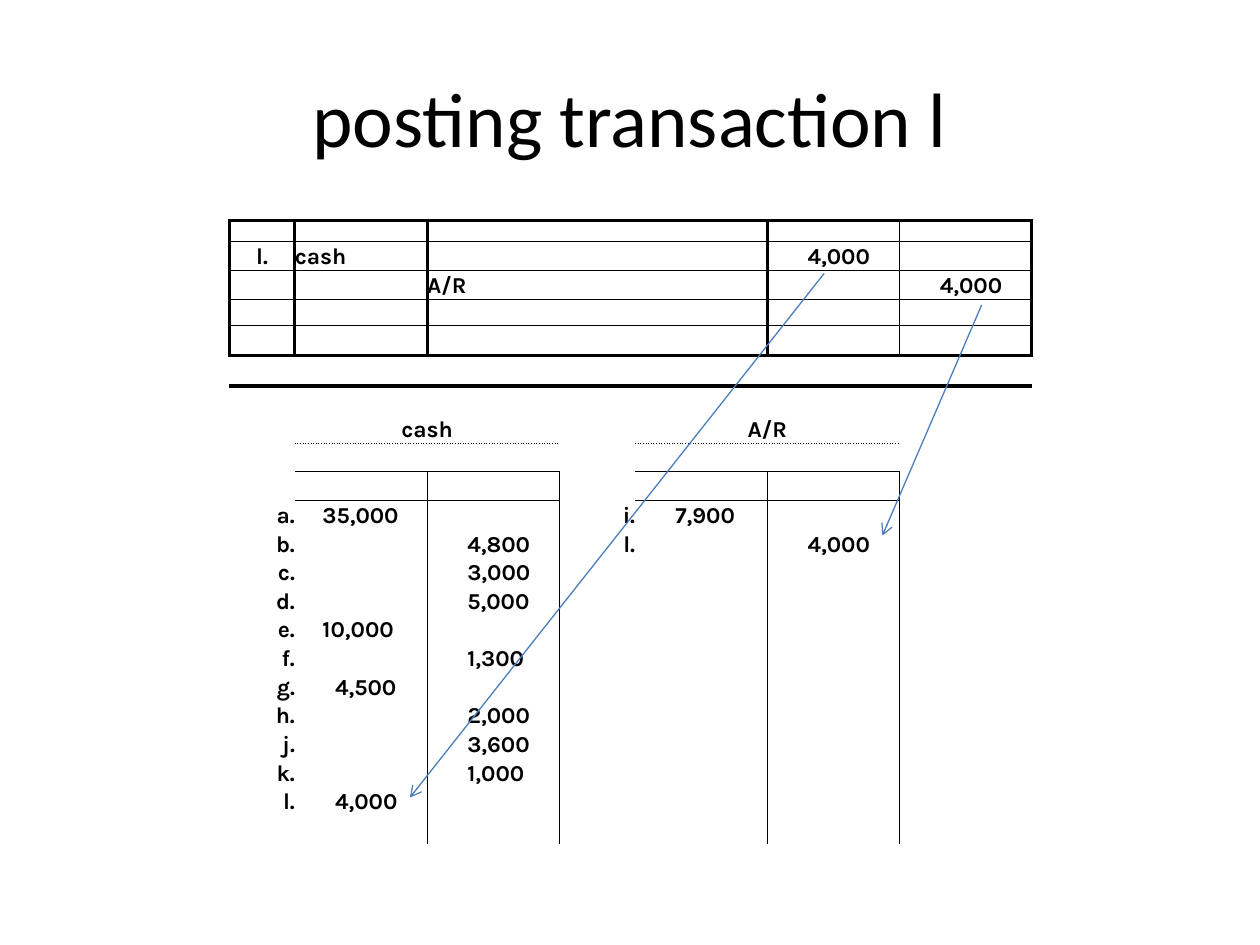
"""Build a slide that posts journal entry l to the cash and A/R accounts."""
from collections import defaultdict
from dataclasses import dataclass

from lxml.etree import SubElement
from pptx import Presentation
from pptx.dml.color import RGBColor
from pptx.enum.shapes import MSO_CONNECTOR as Connector
from pptx.enum.text import MSO_ANCHOR as Anchor, PP_ALIGN as Align
from pptx.oxml.ns import qn
from pptx.util import Inches, Pt


@dataclass(frozen=True)
class Theme:
    ink: str = "000000"
    arrow: str = "4B7EBC"
    title_font: str = "Calibri"
    table_font: str = "Karla"
    title_size: int = 44
    table_size: int = 13
    empty_size: int = 8
    thick: float = 2
    thin: float = 0.5
    arrow_width: float = 0.75
    plain_table: str = "{2D5ABB26-0587-4C30-8999-92F81FD0307C}"


THEME = Theme()
TITLE = "posting transaction l"
JOURNAL = [(1, 0, "l."), (1, 1, "cash"), (1, 5, "4,000"), (2, 2, "A/R"), (2, 6, "4,000")]
ACCOUNTS = [
    ("cash", 1, [
        ("a.", "35,000", ""), ("b.", "", "4,800"), ("c.", "", "3,000"),
        ("d.", "", "5,000"), ("e.", "10,000", ""), ("f.", "", "1,300"),
        ("g.", "4,500", ""), ("h.", "", "2,000"), ("j.", "", "3,600"),
        ("k.", "", "1,000"), ("l.", "4,000", ""),
    ]),
    ("A/R", 4, [("i.", "7,900", ""), ("l.", "", "4,000")]),
]
POSTINGS = [((5.43, 2.1), (1.87, 20.37)), ((6.62, 3.22), (5.87, 11.22))]

WIDTH, HEIGHT = 10, 7.5
LEFT, TOP, TABLE_HEIGHT = 1.82, 1.75, 4.95
COLUMNS = [0.52, 1.05, 1.05, 0.6, 1.05, 1.05, 1.05]
ROW_COUNT = 22
SPECIAL_ROWS = {0: 0.17, 3: 0.21, 4: 0.24, 5: 0.24}
COMMON_ROW = (TABLE_HEIGHT - sum(SPECIAL_ROWS.values())) / (ROW_COUNT - len(SPECIAL_ROWS))
ROWS = [SPECIAL_ROWS.get(row, COMMON_ROW) for row in range(ROW_COUNT)]
JOURNAL_ROWS, HEADING_ROW, FIRST_ENTRY = 5, 7, 10
INDENTS = {5: 0.32, 6: 0.22}


def write(frame, text, font, size, align=Align.LEFT, bold=False):
    paragraph = frame.paragraphs[0]
    paragraph.alignment = align
    run = paragraph.add_run()
    run.text = text
    run.font.name, run.font.size, run.font.bold = font, Pt(size), bold
    run.font.color.rgb = RGBColor.from_string(THEME.ink)


def write_cell(cell, text, align=Align.LEFT):
    cell.vertical_anchor = Anchor.BOTTOM
    is_amount = "," in text
    cell.margin_left = Inches(INDENTS[len(text)] if is_amount else 0)
    cell.margin_right = cell.margin_top = cell.margin_bottom = 0
    write(cell.text_frame, text, THEME.table_font, THEME.table_size, align, bold=True)


def collect_borders():
    borders = defaultdict(dict)

    def horizontal(edge, columns, width, dash="solid"):
        for column in columns:
            borders[edge - 1, column]["B"] = borders[edge, column]["T"] = (width, dash)

    def vertical(edge, rows, width):
        for row in rows:
            borders[row, edge - 1]["R"] = borders[row, edge]["L"] = (width, "solid")

    for edge in range(JOURNAL_ROWS + 1):
        width = THEME.thick if edge in (0, JOURNAL_ROWS) else THEME.thin
        horizontal(edge, range(len(COLUMNS)), width)
    for edge in (0, 1, 5, 6, 7):
        vertical(edge, range(JOURNAL_ROWS), THEME.thin if edge == 6 else THEME.thick)
    for _, first, _ in ACCOUNTS:
        horizontal(HEADING_ROW + 1, (first, first + 1), THEME.thin, "sysDot")
        horizontal(HEADING_ROW + 2, (first, first + 1), THEME.thin)
        vertical(first + 1, range(HEADING_ROW + 2, ROW_COUNT), THEME.thin)
    return borders


def style_cell(cell, sides):
    properties = cell._tc.get_or_add_tcPr()
    for side in "LRTB":
        if side in sides:
            width, dash = sides[side]
            line = SubElement(properties, qn(f"a:ln{side}"), w=str(Pt(width)))
            fill = SubElement(line, qn("a:solidFill"))
            SubElement(fill, qn("a:srgbClr"), val=THEME.ink)
            SubElement(line, qn("a:prstDash"), val=dash)
    cell.fill.background()
    if not cell.text:
        cell.margin_top = cell.margin_bottom = 0
        paragraph = cell.text_frame.paragraphs[0]
        SubElement(paragraph._p, qn("a:endParaRPr"), sz=str(THEME.empty_size * 100))


def add_ledger(slide):
    table = slide.shapes.add_table(
        ROW_COUNT, len(COLUMNS), Inches(LEFT), Inches(TOP),
        Inches(sum(COLUMNS)), Inches(TABLE_HEIGHT),
    ).table
    table.first_row = table.horz_banding = False
    table._tbl.tblPr.find(qn("a:tableStyleId")).text = THEME.plain_table
    for column, width in zip(table.columns, COLUMNS):
        column.width = Inches(width)
    for row, height in zip(table.rows, ROWS):
        row.height = Inches(height)

    for row, column, text in JOURNAL:
        align = Align.CENTER if column == 0 else Align.LEFT
        write_cell(table.cell(row, column), text, align)
    for name, first, entries in ACCOUNTS:
        heading = table.cell(HEADING_ROW, first)
        heading.merge(table.cell(HEADING_ROW, first + 1))
        write_cell(heading, name, Align.CENTER)
        for row, (label, *amounts) in enumerate(entries, FIRST_ENTRY):
            write_cell(table.cell(row, first - 1), label, Align.RIGHT)
            for column, amount in enumerate(amounts, first):
                if amount:
                    write_cell(table.cell(row, column), amount)

    borders = collect_borders()
    for row in range(ROW_COUNT):
        for column in range(len(COLUMNS)):
            style_cell(table.cell(row, column), borders.get((row, column), {}))


def grid_offset(sizes, position):
    index = int(position)
    return sum(sizes[:index]) + (position - index) * sizes[index]


def grid_point(column, row):
    return Inches(LEFT + grid_offset(COLUMNS, column)), Inches(TOP + grid_offset(ROWS, row))


def add_arrow(slide, start, end):
    arrow = slide.shapes.add_connector(Connector.STRAIGHT, *grid_point(*start), *grid_point(*end))
    arrow.line.color.rgb = RGBColor.from_string(THEME.arrow)
    arrow.line.width = Pt(THEME.arrow_width)
    SubElement(arrow.line._get_or_add_ln(), qn("a:tailEnd"), type="arrow")
    SubElement(arrow._element.spPr, qn("a:effectLst"))


def main():
    presentation = Presentation()
    presentation.slide_width, presentation.slide_height = Inches(WIDTH), Inches(HEIGHT)
    slide = presentation.slides.add_slide(presentation.slide_layouts[5])
    title = slide.shapes.title
    title.left, title.top = Inches(WIDTH * 0.05), Inches(HEIGHT * 0.04)
    title.width, title.height = Inches(WIDTH * 0.9), Inches(HEIGHT / 6)
    title.text_frame.vertical_anchor = Anchor.MIDDLE
    write(title.text_frame, TITLE, THEME.title_font, THEME.title_size, Align.CENTER)
    add_ledger(slide)
    for start, end in POSTINGS:
        add_arrow(slide, start, end)
    presentation.save("out.pptx")


if __name__ == "__main__":
    main()
